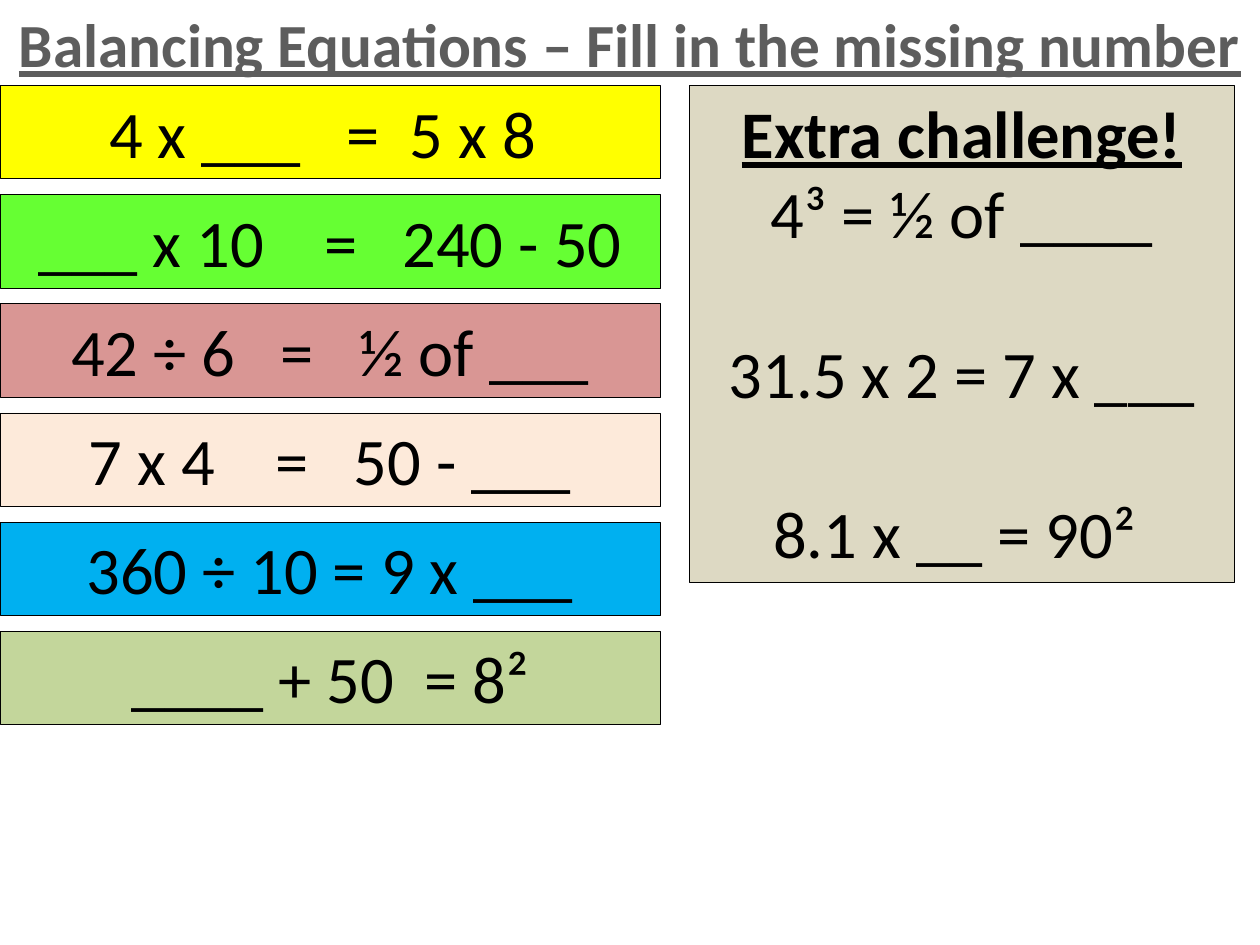
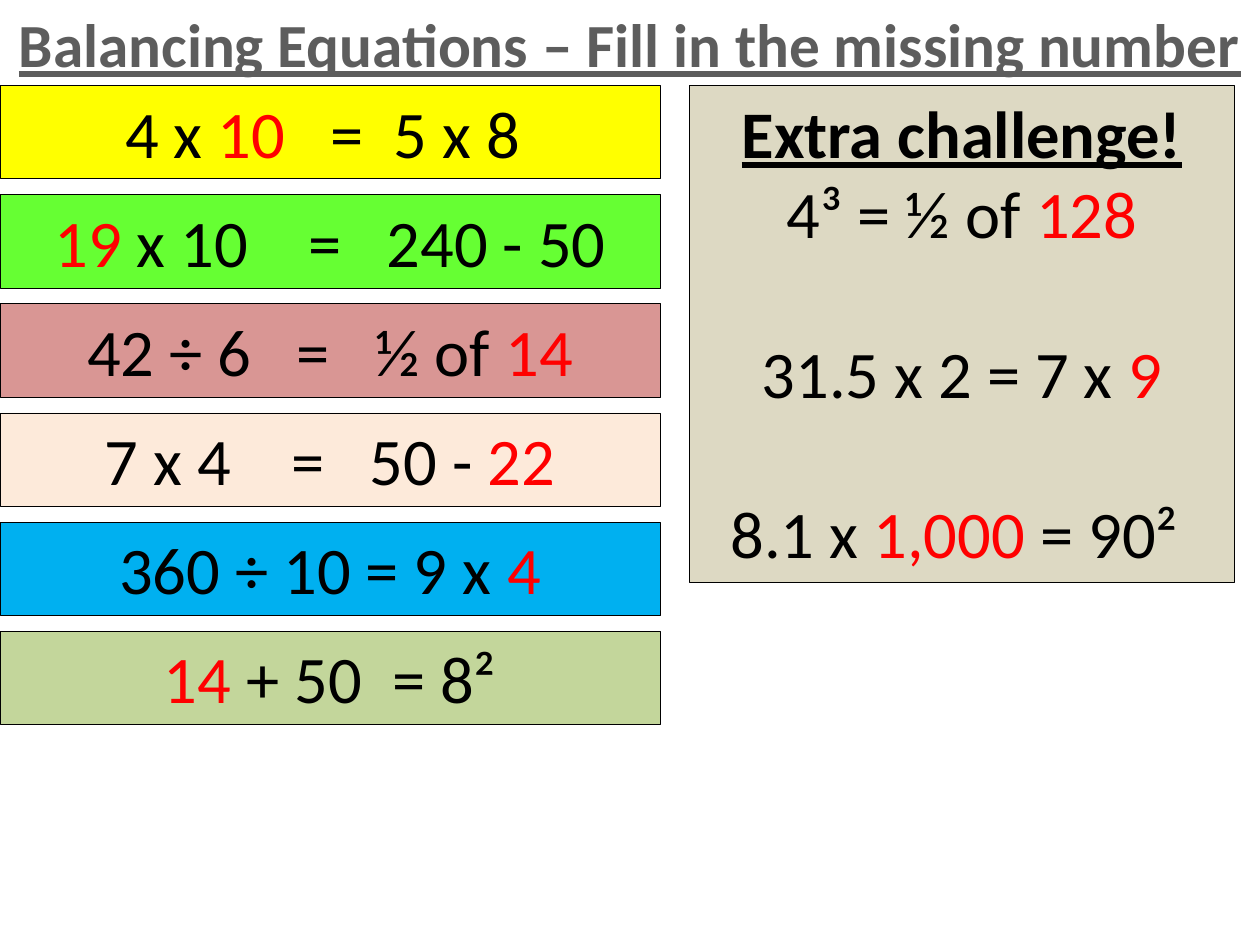
from pptx import Presentation
from pptx.dml.color import RGBColor as Rgb
from pptx.enum.shapes import MSO_SHAPE as Kind
from pptx.enum.text import MSO_ANCHOR as Anchor, PP_ALIGN as Align
from pptx.util import Inches, Pt

WIDE, HIGH = Inches(10), Inches(7.5)
COL, ROW = WIDE / 100, HIGH / 75
HUES = {
    "ink": "000000", "answer": "FF0000", "title": "5D5D5D", "panel": "DDD9C3",
    "yellow": "FFFF00", "green": "66FF33", "rose": "D99694",
    "peach": "FDEADA", "blue": "00B0F0", "olive": "C3D69B",
}
BODY = {"name": "Calibri", "size": Pt(38)}
HEAD = {**BODY, "bold": True, "underline": True}
TITLE = {**HEAD, "size": Pt(35)}
SPACE = 8.6
LINE = Pt(46)

CARDS = [
    ("yellow", "4 x # = 5 x 8 ", "___", "10", (3, 2)),
    ("green", "# x 10 = 240 - 50", "___", "19", (4, 3)),
    ("rose", "42 ÷ 6 = ½ of #", "___", "14", (3, 3)),
    ("peach", "7 x 4 = 50 - #", "___", "22", (4, 3)),
    ("blue", "360 ÷ 10 = 9 x #", "___", "4", (1, 1)),
    ("olive", "# + 50 = 8²", "____", "14", (2, 1)),
]
EXTRAS = [
    ("4³ = ½ of #", "____", "128"),
    ("31.5 x 2 = 7 x #", "___", "9"),
    ("8.1 x # = 90² ", "__", "1,000"),
]


def put(para, text, hue="ink", style=BODY):
    """Add one centred run of text in a style and colour."""
    para.alignment = Align.CENTER
    run = para.add_run()
    run.text = text
    for key, value in style.items():
        setattr(run.font, key, value)
    run.font.color.rgb = Rgb.from_string(HUES[hue])
    return run


def side(para, text, mark, hue):
    """Write one side of an equation, with the mark in place of #."""
    left, hole, right = text.partition("#")
    for part, tone in ((left, "ink"), (mark if hole else "", hue), (right, "ink")):
        if part:
            put(para, part, tone)


def sum_up(para, form, blank, answer, solved, gaps=(1, 1)):
    """Write an equation whose equals sign has gaps counted in spaces."""
    mark, hue = (answer, "answer") if solved else (blank, "ink")
    left, right = form.split(" = ")
    side(para, left, mark, hue)
    for sign, gap in zip(("=", ""), gaps):
        run = put(para, " ")
        if gap > 1:
            run._r.get_or_add_rPr().set("spc", str(round((gap - 1) * SPACE * 100)))
        if sign:
            put(para, sign)
    side(para, right, mark, hue)


def panel(slide, box, hue):
    """Draw a thinly outlined rectangle and return its text frame."""
    shape = slide.shapes.add_shape(Kind.RECTANGLE, *map(round, box))
    shape.shadow.inherit = False
    shape.fill.solid()
    shape.fill.fore_color.rgb = Rgb.from_string(HUES[hue])
    shape.line.color.rgb = Rgb.from_string(HUES["ink"])
    shape.line.width = Pt(0.5)
    frame = shape.text_frame
    frame.word_wrap = True
    frame.vertical_anchor = Anchor.TOP
    return frame


def title(slide, box):
    """Place the underlined slide title."""
    frame = slide.shapes.add_textbox(*map(round, box)).text_frame
    frame.word_wrap = True
    put(frame.paragraphs[0], "Balancing Equations – Fill in the missing number",
        "title", TITLE)


def cards(slide, box, solved):
    """Stack the equation cards evenly in the box."""
    left, top, width, height = box
    tall = 7.4 * ROW
    step = (height - tall) / (len(CARDS) - 1)
    for i, (hue, form, blank, answer, gaps) in enumerate(CARDS):
        frame = panel(slide, (left, top + i * step, width, tall), hue)
        sum_up(frame.paragraphs[0], form, blank, answer, solved, gaps)


def extra(slide, box, solved):
    """Fill the challenge panel with a heading and spaced equations."""
    frame = panel(slide, box, "panel")
    put(frame.paragraphs[0], "Extra challenge!", style=HEAD)
    for i, (form, blank, answer) in enumerate(EXTRAS):
        para = frame.add_paragraph()
        para.space_before = LINE if i else Pt(0)
        sum_up(para, form, blank, answer, solved)


def sheet(deck, solved):
    """Build one worksheet slide, blank or solved."""
    slide = deck.slides.add_slide(deck.slide_layouts[6])
    title(slide, (0, 0, WIDE, 6.9 * ROW))
    cards(slide, (0, 6.8 * ROW, 52.4 * COL, 50.7 * ROW), solved)
    extra(slide, (54.7 * COL, 6.8 * ROW, 43.3 * COL, 39.4 * ROW), solved)


def main():
    """Build and save the deck."""
    deck = Presentation()
    deck.slide_width, deck.slide_height = WIDE, HIGH
    for solved in (False, True):
        sheet(deck, solved)
    deck.save("out.pptx")


if __name__ == "__main__":
    main()
